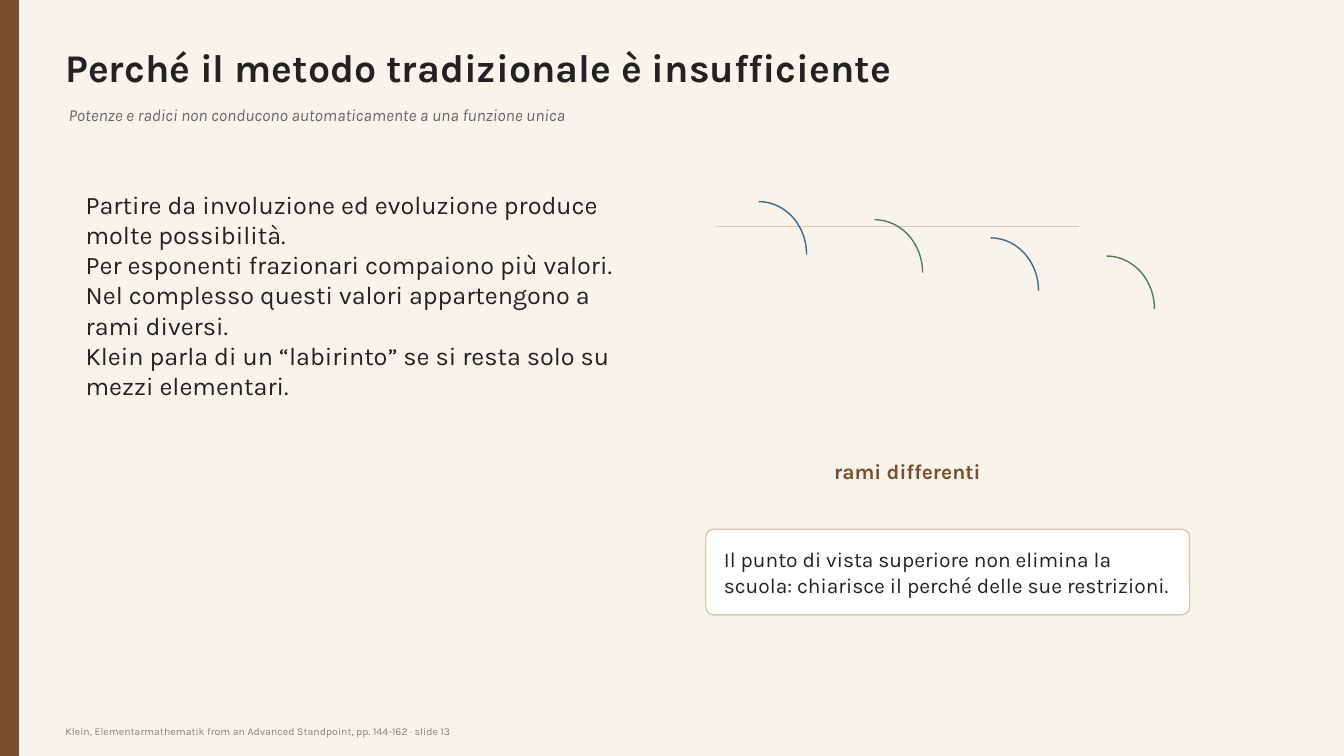
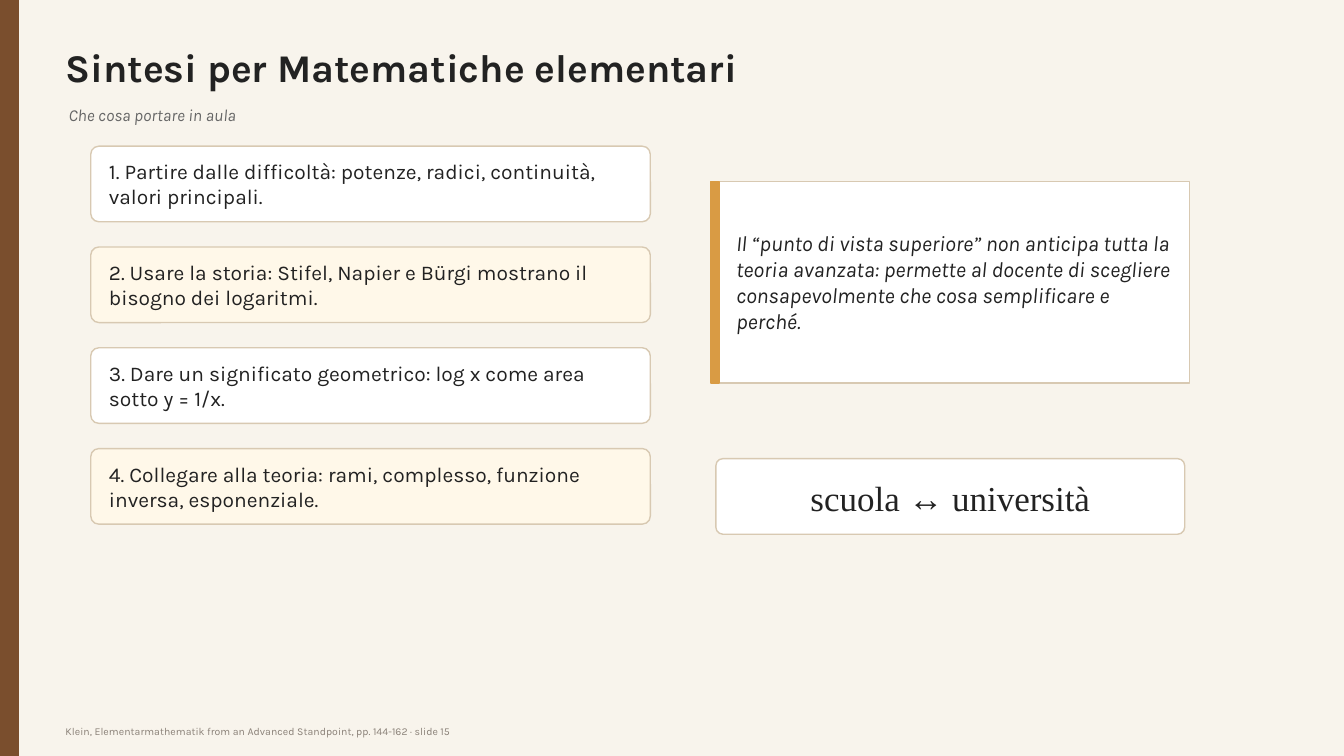
from dataclasses import dataclass, field
from pptx import Presentation as Deck
from pptx.dml.color import RGBColor as Rgb
from pptx.enum.shapes import MSO_CONNECTOR as Link, MSO_SHAPE as Form
from pptx.enum.text import MSO_ANCHOR as Anchor, PP_ALIGN as Align
from pptx.oxml.ns import qn
from pptx.util import Inches, Pt


def style(size, ink="222222", name="Karla", **more):
    return {"size": Pt(size), "name": name, "ink": ink, **more}


@dataclass(frozen=True)
class Theme:
    paper: str = "F8F4EC"
    brown: str = "7A4E2D"
    sand: str = "D8C9B2"
    white: str = "FFFFFF"
    cream: str = "FFF8E9"
    gold: str = "D99B44"
    blue: str = "3E6B89"
    green: str = "567C55"
    title: dict = field(default_factory=lambda: style(28, bold=True))
    lead: dict = field(default_factory=lambda: style(12, "666666", italic=True))
    body: dict = field(default_factory=lambda: style(18))
    card: dict = field(default_factory=lambda: style(15))
    label: dict = field(default_factory=lambda: style(15, "7A4E2D", bold=True))
    quote: dict = field(default_factory=lambda: style(15.5, italic=True))
    motto: dict = field(default_factory=lambda: style(25, name="Times New Roman"))
    foot: dict = field(default_factory=lambda: style(7.5, "8A8178"))


THEME = Theme()
SOURCE = "Klein, Elementarmathematik from an Advanced Standpoint, pp. 144-162 · slide {}"


def place(*sides):
    return [Inches(side) for side in sides]


def write(slide, box, lines, look, align=Align.LEFT):
    frame = slide.shapes.add_textbox(*place(*box)).text_frame
    setup = {"word_wrap": True, "vertical_anchor": Anchor.MIDDLE,
             "margin_left": 0, "margin_right": 0, "margin_top": 0, "margin_bottom": 0}
    for key, value in setup.items():
        setattr(frame, key, value)
    frame.text = "\n".join(lines)
    for para in frame.paragraphs:
        para.alignment = align
        for run in para.runs:
            for key, value in look.items():
                if key == "ink":
                    run.font.color.rgb = Rgb.from_string(value)
                else:
                    setattr(run.font, key, value)


def stroke(shape, ink):
    shape.line.color.rgb = Rgb.from_string(ink)
    shape.line.width = Pt(1)


def draw(slide, form, box, fill, edge):
    shape = slide.shapes.add_shape(form, *place(*box))
    shape.shadow.inherit = False
    if fill:
        shape.fill.solid()
        shape.fill.fore_color.rgb = Rgb.from_string(fill)
    else:
        shape.fill.background()
    stroke(shape, edge)
    return shape


def panel(slide, box, fill=THEME.white, curve=0.08):
    shape = draw(slide, Form.ROUNDED_RECTANGLE, box, fill, THEME.sand)
    shape.adjustments[0] = curve / box[3]


def card(slide, box, text, fill=THEME.white):
    panel(slide, box, fill)
    left, top, width, height = box
    inner = (left + 0.18, top + 0.15, width - 0.36, height - 0.3)
    write(slide, inner, [text], THEME.card)


def rule(slide, left, top, right):
    line = slide.shapes.add_connector(Link.STRAIGHT, *place(left, top, right, top))
    stroke(line, THEME.sand)
    props = line._element.spPr
    props.append(props.makeelement(qn("a:effectLst"), {}))


def quote(slide, box, text):
    left, top, width, height = box
    draw(slide, Form.RECTANGLE, box, THEME.white, THEME.sand)
    draw(slide, Form.RECTANGLE, (left, top, 0.08, height), THEME.gold, THEME.gold)
    inner = (left + 0.25, top + 0.18, width - 0.4, height - 0.36)
    write(slide, inner, [text], THEME.quote)


def start(deck, title, lead, number):
    slide = deck.slides.add_slide(deck.slide_layouts[6])
    slide.background.fill.solid()
    slide.background.fill.fore_color.rgb = Rgb.from_string(THEME.paper)
    draw(slide, Form.RECTANGLE, (0, 0, 0.18, 7.5), THEME.brown, THEME.brown)
    write(slide, (0.65, 0.35, 10.6, 0.62), [title], THEME.title)
    write(slide, (0.68, 0.97, 10.2, 0.33), [lead], THEME.lead)
    write(slide, (0.65, 7.16, 9.5, 0.18), [SOURCE.format(number)], THEME.foot)
    return slide


def limits(deck):
    slide = start(deck, "Perché il metodo tradizionale è insufficiente",
                  "Potenze e radici non conducono automaticamente a una funzione unica", 13)
    write(slide, (0.85, 1.55, 5.5, 2.75), [
        "Partire da involuzione ed evoluzione produce molte possibilità.",
        "Per esponenti frazionari compaiono più valori.",
        "Nel complesso questi valori appartengono a rami diversi.",
        "Klein parla di un “labirinto” se si resta solo su mezzi elementari.",
    ], THEME.body)
    rule(slide, 7.1, 2.25, 10.7)
    for step, ink in enumerate([THEME.blue, THEME.green] * 2):
        box = (7.05 + 1.15 * step, 2 + 0.18 * step, 0.95, 1.05)
        draw(slide, Form.ARC, box, None, ink)
    write(slide, (8, 4.55, 2, 0.25), ["rami differenti"], THEME.label, Align.CENTER)
    card(slide, (7, 5.25, 4.8, 0.85), "Il punto di vista superiore non elimina la scuola: "
         "chiarisce il perché delle sue restrizioni.")


def recap(deck):
    slide = start(deck, "Sintesi per Matematiche elementari", "Che cosa portare in aula", 15)
    points = [
        "1. Partire dalle difficoltà: potenze, radici, continuità, valori principali.",
        "2. Usare la storia: Stifel, Napier e Bürgi mostrano il bisogno dei logaritmi.",
        "3. Dare un significato geometrico: log x come area sotto y = 1/x.",
        "4. Collegare alla teoria: rami, complesso, funzione inversa, esponenziale.",
    ]
    for row, text in enumerate(points):
        fill = THEME.cream if row % 2 else THEME.white
        card(slide, (0.9, 1.45 + row, 5.55, 0.75), text, fill)
    quote(slide, (7.05, 1.8, 4.75, 2),
          "Il “punto di vista superiore” non anticipa tutta la teoria avanzata: permette al "
          "docente di scegliere consapevolmente che cosa semplificare e perché.")
    panel(slide, (7.1, 4.55, 4.65, 0.75), curve=0.07)
    write(slide, (7.2, 4.71, 4.45, 0.45), ["scuola ↔ università"], THEME.motto, Align.CENTER)


def main():
    deck = Deck()
    deck.slide_width, deck.slide_height = place(13.33, 7.5)
    limits(deck)
    recap(deck)
    deck.save("out.pptx")


if __name__ == "__main__":
    main()
